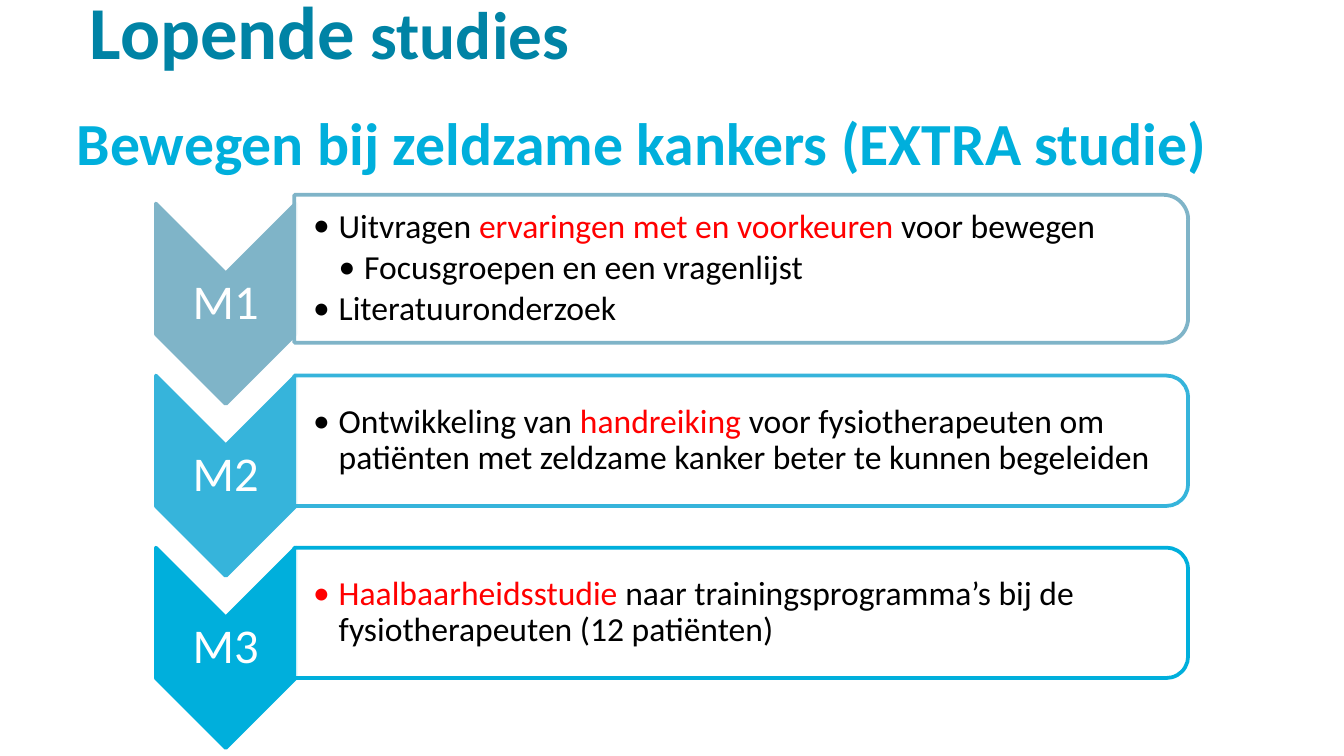
from dataclasses import dataclass

from lxml import etree
from pptx import Presentation
from pptx.dml.color import RGBColor
from pptx.enum import shapes, text
from pptx.oxml.ns import qn
from pptx.util import Inches, Pt


@dataclass(frozen=True)
class Theme:
    font: str = "Calibri"
    heading: str = "0083A5"
    title: str = "00AFDC"
    body: str = "000000"
    accent: str = "FF0000"
    white: str = "FFFFFF"
    heading_large: int = 40
    heading_small: int = 36
    title_size: int = 32
    label_size: int = 26
    body_size: int = 18
    line_width: int = 2


@dataclass(frozen=True)
class Span:
    words: str
    accent: bool = False


@dataclass(frozen=True)
class Bullet:
    spans: tuple[Span, ...]
    level: int = 0


@dataclass(frozen=True)
class Milestone:
    label: str
    color: str
    panel_height: float
    bullets: tuple[Bullet, ...]


THEME = Theme()
PITCH = 1.28
CHEVRON_X, CHEVRON_Y = 1.68, 2.26
CHEVRON_LENGTH, CHEVRON_WIDTH = 1.49, 1.04
LABEL_HEIGHT = 0.45
PANEL_LEFT, PANEL_Y, PANEL_WIDTH = 2.19, 2.0, 6.65
INDENT = 0.19

MILESTONES = (
    Milestone("M1", "7FB4C8", 1.1, (
        Bullet((Span("Uitvragen "), Span("ervaringen met en voorkeuren ", True),
                Span("voor bewegen"))),
        Bullet((Span("Focusgroepen en een vragenlijst"),), 1),
        Bullet((Span("Literatuuronderzoek"),)),
    )),
    Milestone("M2", "36B4DB", 0.97, (
        Bullet((Span("Ontwikkeling van "), Span("handreiking", True),
                Span(" voor fysiotherapeuten om patiënten met zeldzame kanker "
                     "beter te kunnen begeleiden"))),
    )),
    Milestone("M3", "00AFDC", 0.97, (
        Bullet((Span("Haalbaarheidsstudie", True),
                Span(" naar trainingsprogramma’s bij de fysiotherapeuten "
                     "(12 patiënten)"))),
    )),
)


def add_run(p, words: str, size: int, color: str, bold: bool = False) -> None:
    r = p.add_run()
    r.text = words
    r.font.name = THEME.font
    r.font.size = Pt(size)
    r.font.bold = bold
    r.font.color.rgb = RGBColor.from_string(color)


def set_margins(tf, left: float, other: float) -> None:
    tf.margin_left = Inches(left)
    tf.margin_top = tf.margin_right = tf.margin_bottom = Inches(other)


def add_title(s) -> None:
    sp = s.shapes.title
    sp.left, sp.top = Inches(0.57), Inches(0.74)
    sp.width, sp.height = Inches(9.71), Inches(0.58)
    tf = sp.text_frame
    set_margins(tf, 0, 0)
    tf.auto_size = text.MSO_AUTO_SIZE.NONE
    tf.vertical_anchor = text.MSO_ANCHOR.MIDDLE
    p = tf.paragraphs[0]
    p.alignment = text.PP_ALIGN.LEFT
    p.line_spacing = Pt(42)
    add_run(p, "Bewegen bij zeldzame kankers (EXTRA studie)",
            THEME.title_size, THEME.title, True)


def add_heading(s) -> None:
    sp = s.shapes.add_textbox(Inches(0.57), Inches(-0.16), Inches(3.82), Inches(0.77))
    tf = sp.text_frame
    tf.word_wrap = False
    tf.auto_size = text.MSO_AUTO_SIZE.SHAPE_TO_FIT_TEXT
    p = tf.paragraphs[0]
    add_run(p, "Lopende", THEME.heading_large, THEME.heading, True)
    add_run(p, " studies", THEME.heading_small, THEME.heading, True)


def add_turned_shape(s, kind, x: float, y: float, width: float, height: float,
                     fill: str, line: str):
    sp = s.shapes.add_shape(kind, Inches(x - width / 2), Inches(y - height / 2),
                            Inches(width), Inches(height))
    sp.rotation = 90
    sp.shadow.inherit = False
    sp.fill.solid()
    sp.fill.fore_color.rgb = RGBColor.from_string(fill)
    sp.line.color.rgb = RGBColor.from_string(line)
    sp.line.width = Pt(THEME.line_width)
    return sp


def add_middle_box(s, left: float, y: float, width: float, height: float,
                   margin_left: float, margin: float):
    sp = s.shapes.add_textbox(Inches(left), Inches(y - height / 2),
                              Inches(width), Inches(height))
    tf = sp.text_frame
    tf.word_wrap = True
    tf.vertical_anchor = text.MSO_ANCHOR.MIDDLE
    set_margins(tf, margin_left, margin)
    return tf


def add_marker(s, item: Milestone, y: float) -> None:
    add_turned_shape(s, shapes.MSO_SHAPE.CHEVRON, CHEVRON_X, y, CHEVRON_LENGTH,
                     CHEVRON_WIDTH, item.color, item.color)
    tf = add_middle_box(s, CHEVRON_X - CHEVRON_WIDTH / 2, y, CHEVRON_WIDTH,
                        LABEL_HEIGHT, 0.02, 0.02)
    p = tf.paragraphs[0]
    p.alignment = text.PP_ALIGN.CENTER
    p.line_spacing = 0.9
    add_run(p, item.label, THEME.label_size, THEME.white)


def add_panel(s, item: Milestone, y: float) -> None:
    sp = add_turned_shape(s, shapes.MSO_SHAPE.ROUND_2_SAME_RECTANGLE,
                          PANEL_LEFT + PANEL_WIDTH / 2, y, item.panel_height,
                          PANEL_WIDTH, THEME.white, item.color)
    fill = sp._element.spPr.find(qn("a:solidFill"))
    etree.SubElement(fill[0], qn("a:alpha"), val="90000")
    tf = add_middle_box(s, PANEL_LEFT, y, PANEL_WIDTH - 0.05,
                        item.panel_height - 0.1, 0.14, 0.01)
    for i, bullet in enumerate(item.bullets):
        p = tf.add_paragraph() if i else tf.paragraphs[0]
        p.level = bullet.level
        p.line_spacing = 0.9
        p.space_after = Pt(0.15 * THEME.body_size)
        pPr = p._p.get_or_add_pPr()
        pPr.set("marL", str(Inches(INDENT * (bullet.level + 1))))
        pPr.set("indent", str(Inches(-INDENT)))
        etree.SubElement(pPr, qn("a:buFont"), typeface=THEME.font)
        etree.SubElement(pPr, qn("a:buChar"), char="•")
        for span in bullet.spans:
            add_run(p, span.words, THEME.body_size,
                    THEME.accent if span.accent else THEME.body)


def main() -> None:
    prs = Presentation()
    prs.slide_width = Inches(10)
    prs.slide_height = prs.slide_width * 9 // 16
    s = prs.slides.add_slide(prs.slide_layouts[5])
    add_title(s)
    add_heading(s)
    for i, item in enumerate(MILESTONES):
        add_marker(s, item, CHEVRON_Y + i * PITCH)
        add_panel(s, item, PANEL_Y + i * PITCH)
    prs.save("out.pptx")


if __name__ == "__main__":
    main()
